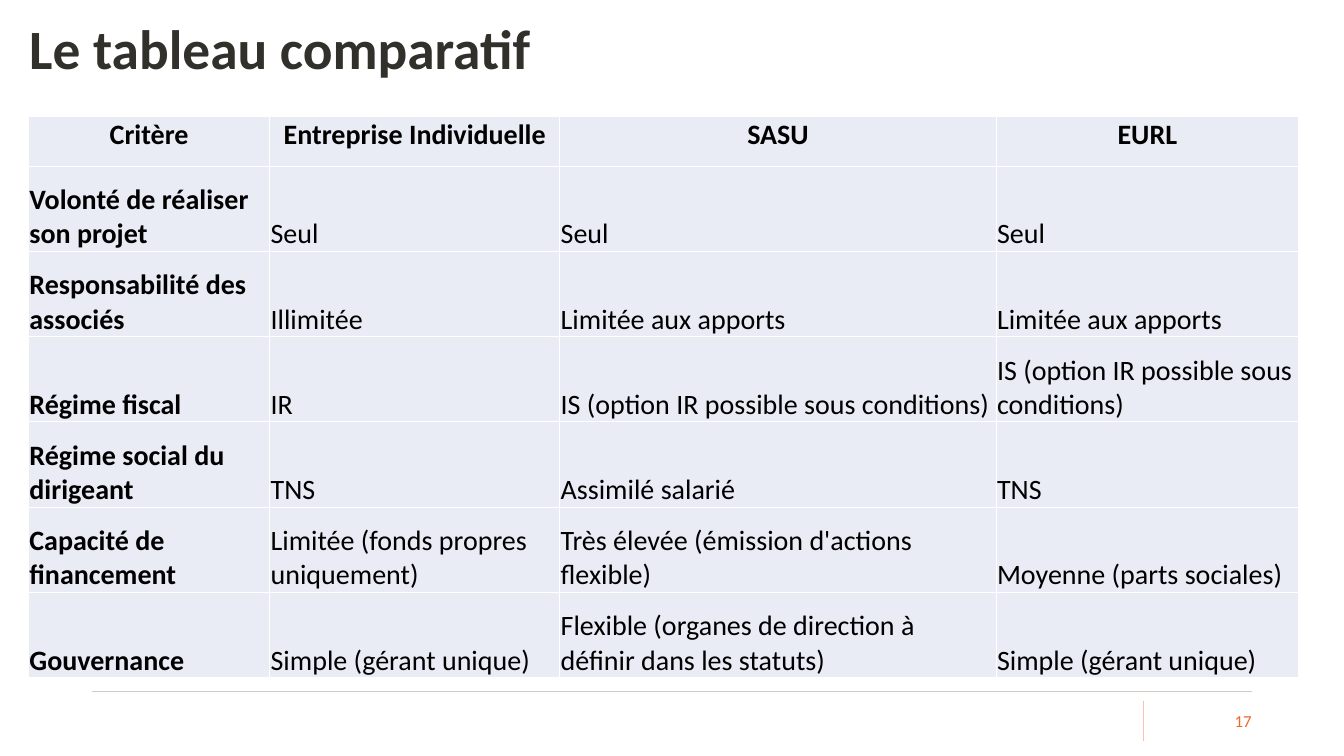
from lxml.etree import SubElement
from pptx import Presentation
from pptx.dml.color import RGBColor
from pptx.enum.shapes import MSO_CONNECTOR
from pptx.enum.text import MSO_ANCHOR as Anchor, MSO_AUTO_SIZE as AutoSize, PP_ALIGN as Align
from pptx.oxml.ns import qn
from pptx.util import Pt

COLORS = {
    "title": "31302B",
    "text": "000000",
    "cell": "E9EBF5",
    "border": "FFFFFF",
    "rule": "CECDC7",
    "divider": "F8C2AC",
    "number": "EE672F",
}
FONT = "Calibri"

COLUMN_WIDTHS = [172.3, 207.2, 311.7, 216]
HEADER_HEIGHT = 35.5
ROW_HEIGHT = 60.9
COMPARISON = [
    ["Critère", "Entreprise Individuelle", "SASU", "EURL"],
    ["Volonté de réaliser son projet", "Seul", "Seul", "Seul"],
    ["Responsabilité des associés", "Illimitée", "Limitée aux apports", "Limitée aux apports"],
    ["Régime fiscal", "IR", "IS (option IR possible sous conditions)",
     "IS (option IR possible sous conditions)"],
    ["Régime social du dirigeant", "TNS", "Assimilé salarié", "TNS"],
    ["Capacité de financement", "Limitée (fonds propres uniquement)",
     "Très élevée (émission d'actions flexible)", "Moyenne (parts sociales)"],
    ["Gouvernance", "Simple (gérant unique)",
     "Flexible (organes de direction à définir dans les statuts)", "Simple (gérant unique)"],
]


def rgb(name):
    return RGBColor.from_string(COLORS[name])


def set_margins(target, left, top, right, bottom):
    target.margin_left, target.margin_top = Pt(left), Pt(top)
    target.margin_right, target.margin_bottom = Pt(right), Pt(bottom)


def style_paragraph(para, size, color, bold=False, align=Align.LEFT):
    para.alignment = align
    font = para.font
    font.name, font.size, font.bold = FONT, Pt(size), bold
    font.color.rgb = rgb(color)


def add_title(page, box, text):
    title = page.shapes.title
    title.left, title.top, title.width, title.height = map(Pt, box)
    frame = title.text_frame
    frame.text = text
    frame.word_wrap = True
    frame.auto_size = AutoSize.NONE
    frame.vertical_anchor = Anchor.MIDDLE
    set_margins(frame, 0, 3.6, 7.2, 3.6)
    para = frame.paragraphs[0]
    para.line_spacing = 0.9
    style_paragraph(para, 39.6, "title", bold=True)


def add_borders(cell):
    properties = cell._tc.get_or_add_tcPr()
    for side in ("a:lnL", "a:lnR", "a:lnT", "a:lnB"):
        line = SubElement(properties, qn(side), w=str(Pt(1)))
        fill = SubElement(line, qn("a:solidFill"))
        SubElement(fill, qn("a:srgbClr"), val=COLORS["border"])


def fill_cell(cell, text, is_header, is_criterion):
    add_borders(cell)
    cell.fill.solid()
    cell.fill.fore_color.rgb = rgb("cell")
    cell.vertical_anchor = Anchor.TOP if is_header else Anchor.BOTTOM
    set_margins(cell, 0.6, 0.6, 0.6, 0)
    cell.text = text
    style_paragraph(cell.text_frame.paragraphs[0], 20, "text",
                    bold=is_header or is_criterion,
                    align=Align.CENTER if is_header else Align.LEFT)


def add_comparison(page, left, top):
    heights = [HEADER_HEIGHT] + [ROW_HEIGHT] * (len(COMPARISON) - 1)
    table = page.shapes.add_table(
        len(heights), len(COLUMN_WIDTHS), Pt(left), Pt(top),
        Pt(sum(COLUMN_WIDTHS)), Pt(sum(heights))).table
    table.first_row = table.horz_banding = False
    for column, width in zip(table.columns, COLUMN_WIDTHS):
        column.width = Pt(width)
    for r, (row, height) in enumerate(zip(table.rows, heights)):
        row.height = Pt(height)
        for c, text in enumerate(COMPARISON[r]):
            fill_cell(table.cell(r, c), text, r == 0, c == 0)


def add_rule(page, start, end, color):
    rule = page.shapes.add_connector(MSO_CONNECTOR.STRAIGHT, *map(Pt, start + end))
    rule.line.color.rgb = rgb(color)
    rule.line.width = Pt(0.5)
    SubElement(rule._element.spPr, qn("a:effectLst"))


def add_footer(page, box, number):
    left, top, width, height = box
    right = left + width
    number_top, number_height, number_width = top + 6.5, height - 6.5, 68.4
    divider = right - number_width - 8.6
    add_rule(page, (left, top), (right, top), "rule")
    add_rule(page, (divider, number_top), (divider, top + height), "divider")
    label = page.shapes.add_textbox(Pt(right - number_width), Pt(number_top),
                                    Pt(number_width), Pt(number_height))
    frame = label.text_frame
    frame.word_wrap = True
    frame.vertical_anchor = Anchor.MIDDLE
    set_margins(frame, 0, 3.6, 0, 3.6)
    frame.text = number
    style_paragraph(frame.paragraphs[0], 12, "number", align=Align.RIGHT)


def main():
    deck = Presentation()
    deck.slide_width, deck.slide_height = Pt(960), Pt(540)
    page = deck.slides.add_slide(deck.slide_layouts[5])
    add_footer(page, (66, 493.9, 828, 35.3), "17")
    add_title(page, (20.9, 16.6, 753.8, 41), "Le tableau comparatif")
    add_comparison(page, 20.4, 83.2)
    deck.save("out.pptx")


if __name__ == "__main__":
    main()
